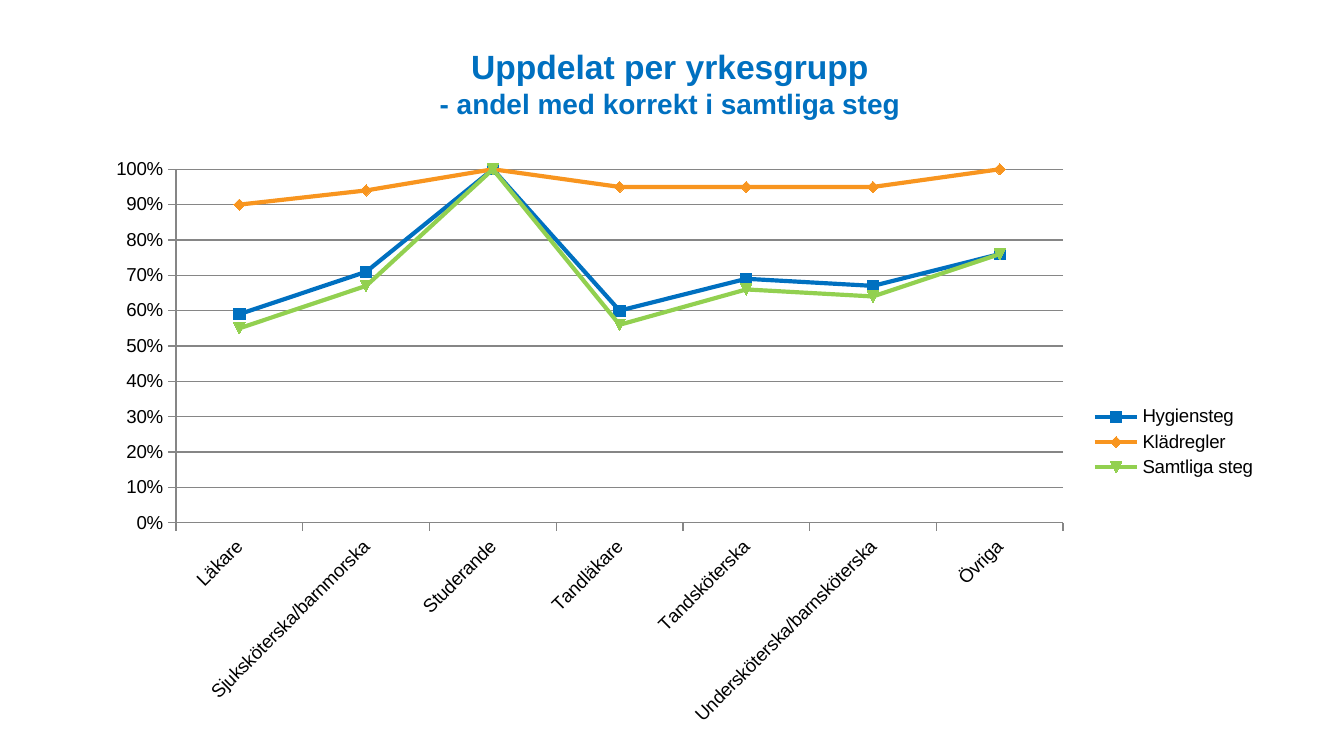
from lxml import etree
from pptx import Presentation
from pptx.chart.data import CategoryChartData
from pptx.dml.color import RGBColor
from pptx.enum.chart import XL_CHART_TYPE, XL_LEGEND_POSITION, XL_MARKER_STYLE, XL_TICK_MARK
from pptx.enum.text import MSO_ANCHOR, PP_ALIGN
from pptx.oxml.ns import qn
from pptx.util import Inches, Pt

FONT = "Arial"
TITLE = [("Uppdelat per yrkesgrupp", 18), ("- andel med korrekt i samtliga steg", 15)]
GROUPS = ["Läkare", "Sjuksköterska/barnmorska", "Studerande", "Tandläkare",
          "Tandsköterska", "Undersköterska/barnsköterska", "Övriga"]
SERIES = [
    ("Hygiensteg", "0070C0", [0.59, 0.71, 1, 0.6, 0.69, 0.67, 0.76]),
    ("Klädregler", "F8951F", [0.9, 0.94, 1, 0.95, 0.95, 0.95, 1]),
    ("Samtliga steg", "92D050", [0.55, 0.67, 1, 0.56, 0.66, 0.64, 0.76]),
]
TITLE_BOX = (0.56, 0.57, 8.85, 0.37)
CHART_BOX = (0.69, 1.1, 8.74, 4.39)
PLOT_BOX = (1.31, 1.26, 6.6, 2.63)
LEGEND_BOX = (8.1, 2.99, 1.27, 0.6)


def color(value):
    return RGBColor.from_string(value)


def add_line(p, text, size=18, fill="0070C0", bold=True):
    r = p.add_run()
    r.text = text
    r.font.name, r.font.size, r.font.bold = FONT, Pt(size), bold
    r.font.color.rgb = color(fill)


def chart_share(box):
    left, top, width, height = CHART_BOX
    x, y, w, h = box
    return (x - left) / width, (y - top) / height, w / width, h / height


def place(parent, after, box, inner=False):
    for old in parent.findall(qn("c:layout")):
        parent.remove(old)
    layout = etree.Element(qn("c:layout"))
    manual = etree.SubElement(layout, qn("c:manualLayout"))
    items = [("layoutTarget", "inner")] if inner else []
    items += [("xMode", "edge"), ("yMode", "edge"), *zip("xywh", chart_share(box))]
    for tag, value in items:
        etree.SubElement(manual, qn(f"c:{tag}")).set("val", str(value))
    if after is None:
        parent.insert(0, layout)
    else:
        after.addnext(layout)


prs = Presentation()
prs.slide_width = Inches(10)
prs.slide_height = prs.slide_width * 9 // 16
s = prs.slides.add_slide(prs.slide_layouts[6])

tf = s.shapes.add_textbox(*map(Inches, TITLE_BOX)).text_frame
tf.word_wrap = True
tf.vertical_anchor = MSO_ANCHOR.BOTTOM
p = tf.paragraphs[0]
p.alignment = PP_ALIGN.CENTER
for i, (text, size) in enumerate(TITLE):
    if i:
        p.add_line_break()
    add_line(p, text, size=size)

data = CategoryChartData(number_format="0%")
data.categories = GROUPS
for name, _, values in SERIES:
    data.add_series(name, values)
chart = s.shapes.add_chart(XL_CHART_TYPE.LINE_MARKERS, *map(Inches, CHART_BOX), data).chart
chart.has_title = False
chart.font.name, chart.font.size = FONT, Pt(10)
chart.font.color.rgb = color("000000")

plot = chart.plots[0]
plot.vary_by_categories = False
for series, (_, fill, _) in zip(plot.series, SERIES):
    series.smooth = False
    series.format.line.width = Pt(2.25)
    series.format.line.color.rgb = color(fill)
    marker = series.marker
    marker.style, marker.size = XL_MARKER_STYLE.AUTOMATIC, 6
    marker.format.fill.solid()
    marker.format.fill.fore_color.rgb = color(fill)
    marker.format.line.color.rgb = color(fill)

value_axis, group_axis = chart.value_axis, chart.category_axis
value_axis.minimum_scale, value_axis.maximum_scale, value_axis.major_unit = 0, 1, 0.1
value_axis.has_major_gridlines = True
value_axis.tick_labels.number_format = "0%"
value_axis.tick_labels.number_format_is_linked = False
for axis in (value_axis, group_axis):
    axis.major_tick_mark = XL_TICK_MARK.OUTSIDE
    axis.tick_labels.font.size = Pt(10)
for part in (value_axis, group_axis, value_axis.major_gridlines):
    part.format.line.width = Pt(0.75)
    part.format.line.color.rgb = color("868686")
group_axis._element.find(qn("c:txPr")).find(qn("a:bodyPr")).set("rot", "-2700000")

chart.has_legend = True
legend = chart.legend
legend.position = XL_LEGEND_POSITION.RIGHT
legend.include_in_layout = False
legend.font.size = Pt(10)
place(legend._element, legend._element.find(qn("c:legendPos")), LEGEND_BOX)
place(chart._chartSpace.chart.plotArea, None, PLOT_BOX, inner=True)

prs.save("out.pptx")
